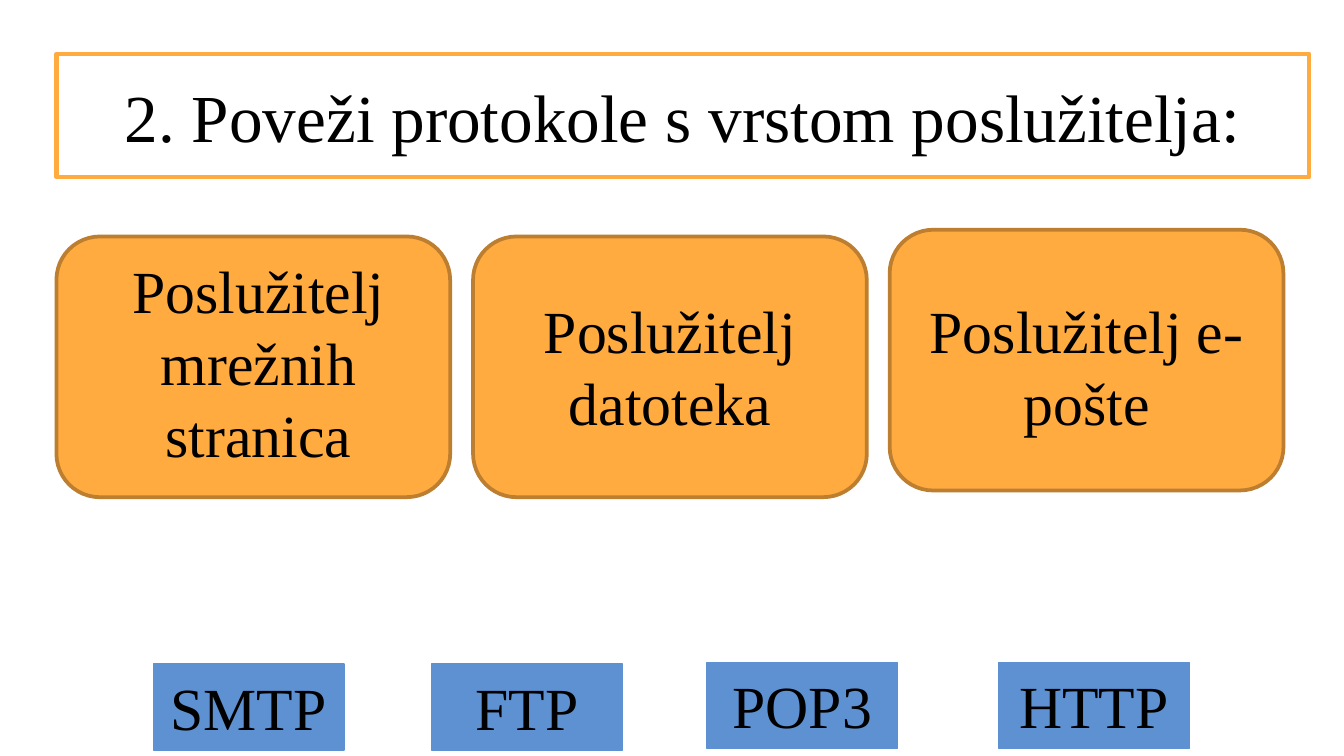
from typing import NamedTuple

from pptx import Presentation
from pptx.dml.color import RGBColor
from pptx.enum.shapes import MSO_SHAPE
from pptx.enum.text import MSO_ANCHOR, MSO_AUTO_SIZE, PP_ALIGN
from pptx.util import Inches, Pt

WIDE = 10
HIGH = WIDE * 9 / 16
ORANGE, BROWN, BLUE, BLACK = "FFAB40", "BD7F2F", "5D91D1", "000000"
LEFT, STEP = 0.42, 3.1


class Box(NamedTuple):
    left: float
    top: float
    width: float
    height: float

    def place(self) -> tuple:
        return tuple(Inches(side) for side in self)


class Card(NamedTuple):
    """A server type, with its text box inset from the card's left edge."""
    text: str
    top: float
    inset: float
    text_top: float
    text_high: float


class Chip(NamedTuple):
    text: str
    left: float
    top: float


CARDS = [
    Card("Poslužitelj mrežnih stranica", 1.76, 0.16, 1.84, 1.72),
    Card("Poslužitelj datoteka", 1.76, 0.12, 2.14, 1.18),
    Card("Poslužitelj e-pošte", 1.71, 0.12, 2.14, 1.18),
]
CHIPS = [
    Chip("HTTP", 7.43, 4.93),
    Chip("FTP", 3.21, 4.94),
    Chip("POP3", 5.26, 4.93),
    Chip("SMTP", 1.14, 4.94),
]


def color(code: str) -> RGBColor:
    return RGBColor.from_string(code)


def outline(shape, code: str, width: float) -> None:
    shape.line.color.rgb = color(code)
    shape.line.width = Pt(width)


def write(shape, text: str, size: int, anchor=MSO_ANCHOR.TOP,
          fit=MSO_AUTO_SIZE.SHAPE_TO_FIT_TEXT) -> None:
    frame = shape.text_frame
    frame.text = text
    frame.word_wrap = True
    frame.auto_size = fit
    frame.vertical_anchor = anchor
    line = frame.paragraphs[0]
    line.alignment = PP_ALIGN.CENTER
    line.font.name = "Times New Roman"
    line.font.size = Pt(size)
    line.font.color.rgb = color(BLACK)


def add_block(slide, kind, box: Box, fill: str, edge: str, width: float):
    shape = slide.shapes.add_shape(kind, *box.place())
    shape.shadow.inherit = False
    shape.fill.solid()
    shape.fill.fore_color.rgb = color(fill)
    outline(shape, edge, width)
    return shape


def add_title(slide, text: str) -> None:
    title = slide.shapes.title
    box = Box(LEFT, 0.4, 9.32, 0.92)
    title.left, title.top, title.width, title.height = box.place()
    outline(title, ORANGE, 2.25)
    write(title, text, 36, MSO_ANCHOR.MIDDLE, MSO_AUTO_SIZE.NONE)
    frame = title.text_frame
    frame.margin_top = frame.margin_bottom = Inches(0.1)


def add_card(slide, card: Card, col: int) -> None:
    left = LEFT + col * STEP
    add_block(slide, MSO_SHAPE.ROUNDED_RECTANGLE,
              Box(left, card.top, 2.93, 1.94), ORANGE, BROWN, 2)
    box = Box(left + card.inset, card.text_top, 2.69, card.text_high)
    write(slide.shapes.add_textbox(*box.place()), card.text, 32)


def add_chip(slide, chip: Chip) -> None:
    box = Box(chip.left, chip.top, 1.42, 0.64)
    shape = add_block(slide, MSO_SHAPE.RECTANGLE, box, BLUE, BLUE, 0.75)
    write(shape, chip.text, 32)


def main() -> None:
    deck = Presentation()
    deck.slide_width, deck.slide_height = Inches(WIDE), Inches(HIGH)
    slide = deck.slides.add_slide(deck.slide_layouts[5])
    add_title(slide, "2. Poveži protokole s vrstom poslužitelja:")
    for col, card in enumerate(CARDS):
        add_card(slide, card, col)
    for chip in CHIPS:
        add_chip(slide, chip)
    deck.save("out.pptx")


if __name__ == "__main__":
    main()
